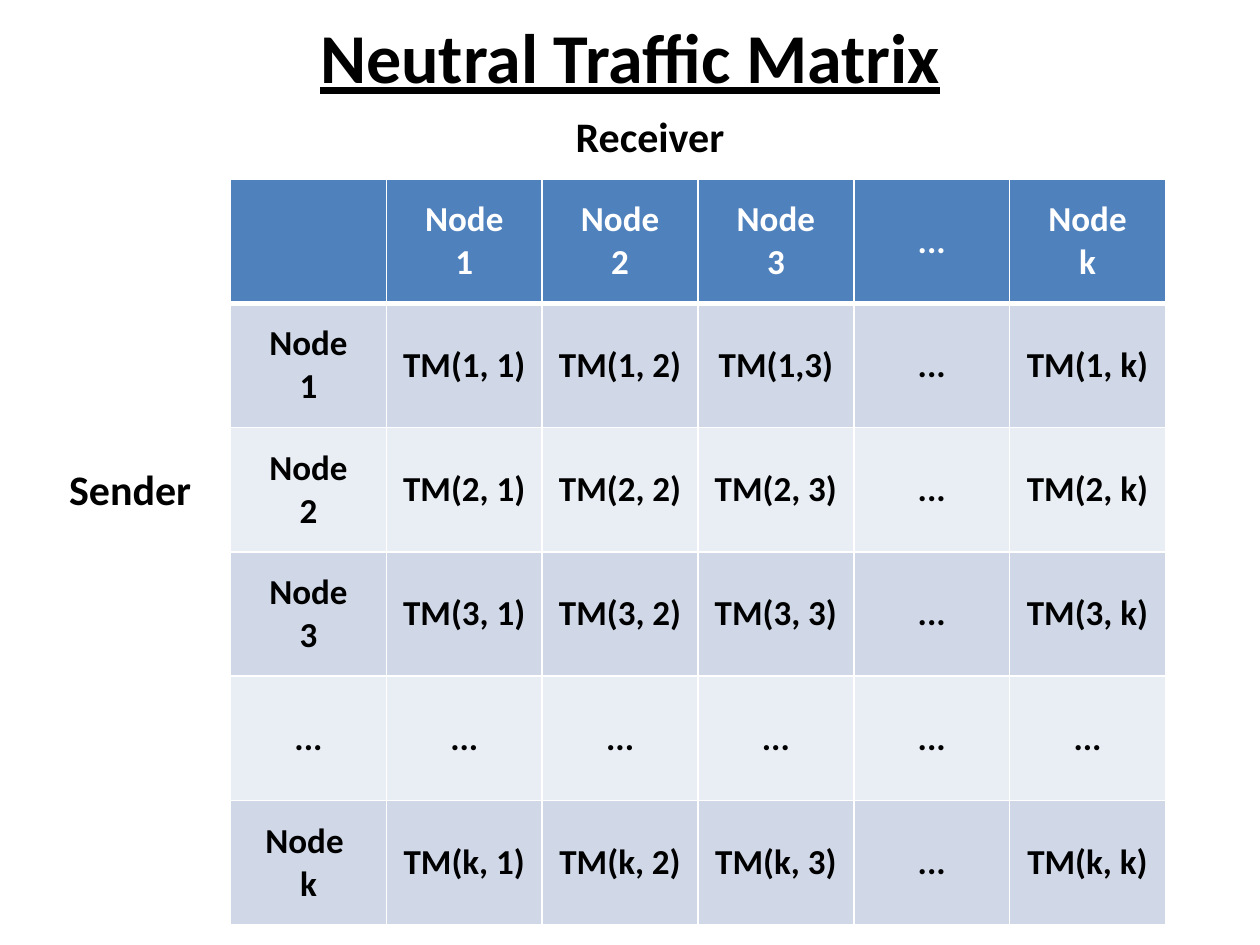
from dataclasses import dataclass
from pptx import Presentation
from pptx.dml.color import RGBColor as RGB
from pptx.enum.text import MSO_ANCHOR as Anchor, PP_ALIGN as Align
from pptx.oxml.ns import qn
from pptx.util import Inches, Pt
from lxml.etree import SubElement as Sub


@dataclass(frozen=True)
class Theme:
    font: str = "Calibri"
    ink: str = "000000"
    white: str = "FFFFFF"
    head: str = "4F81BD"
    bands: tuple = ("D0D8E8", "E9EDF4")
    title: int = 40
    label: int = 24
    cell: int = 20
    thin: int = 1
    thick: int = 3


THEME = Theme()
ROWS = [
    ["", "Node\n1", "Node\n2", "Node\n3", "...", "Node\nk"],
    ["Node\n1", "TM(1, 1)", "TM(1, 2)", "TM(1,3)", "...", "TM(1, k)"],
    ["Node\n2", "TM(2, 1)", "TM(2, 2)", "TM(2, 3)", "...", "TM(2, k)"],
    ["Node\n3", "TM(3, 1)", "TM(3, 2)", "TM(3, 3)", "...", "TM(3, k)"],
    ["..."] * 6,
    ["Node \nk", "TM(k, 1)", "TM(k, 2)", "TM(k, 3)", "...", "TM(k, k)"],
]


def style(frame, size, color, align, under=None):
    for para in frame.paragraphs:
        para.alignment = align
        for run in para.runs:
            font = run.font
            font.name, font.size = THEME.font, Pt(size)
            font.bold, font.underline = True, under
            font.color.rgb = RGB.from_string(color)


def add_text(slide, box, text, size, align=Align.LEFT, wrap=False, under=None):
    frame = slide.shapes.add_textbox(*map(Inches, box)).text_frame
    frame.word_wrap = wrap
    frame.vertical_anchor = Anchor.MIDDLE if wrap else Anchor.TOP
    frame.text = text
    style(frame, size, THEME.ink, align, under)


def add_edges(cell, row):
    props = cell._tc.get_or_add_tcPr()
    for spot, side in enumerate(("lnL", "lnR", "lnT", "lnB")):
        heavy = (row, side) in ((0, "lnB"), (1, "lnT"))
        width = Pt(THEME.thick if heavy else THEME.thin)
        line = props.makeelement(qn(f"a:{side}"), {"w": str(width)})
        fill = Sub(line, qn("a:solidFill"))
        Sub(fill, qn("a:srgbClr"), val=THEME.white)
        props.insert(spot, line)


def add_matrix(slide, box, rows):
    left, top, width, height = map(Inches, box)
    count, span = len(rows), len(rows[0])
    table = slide.shapes.add_table(count, span, left, top, width, height).table
    for r, row in enumerate(rows):
        fill = THEME.bands[(r - 1) % 2] if r else THEME.head
        ink = THEME.ink if r else THEME.white
        for c, text in enumerate(row):
            cell = table.cell(r, c)
            cell.fill.solid()
            cell.fill.fore_color.rgb = RGB.from_string(fill)
            cell.vertical_anchor = Anchor.MIDDLE
            cell.text_frame.text = text
            style(cell.text_frame, THEME.cell, ink, Align.CENTER)
            add_edges(cell, r)


def main():
    deck = Presentation()
    deck.slide_width, deck.slide_height = Inches(10), Inches(7.5)
    slide = deck.slides.add_slide(deck.slide_layouts[6])
    add_text(slide, (0.5, 0.05, 9, 0.78), "Neutral Traffic Matrix",
             THEME.title, Align.CENTER, wrap=True, under=True)
    add_matrix(slide, (1.83, 1.42, 7.42, 5.92), ROWS)
    add_text(slide, (0.45, 3.63, 1.18, 0.5), "Sender", THEME.label)
    add_text(slide, (4.47, 0.83, 1.39, 0.5), "Receiver", THEME.label)
    deck.save("out.pptx")


if __name__ == "__main__":
    main()
